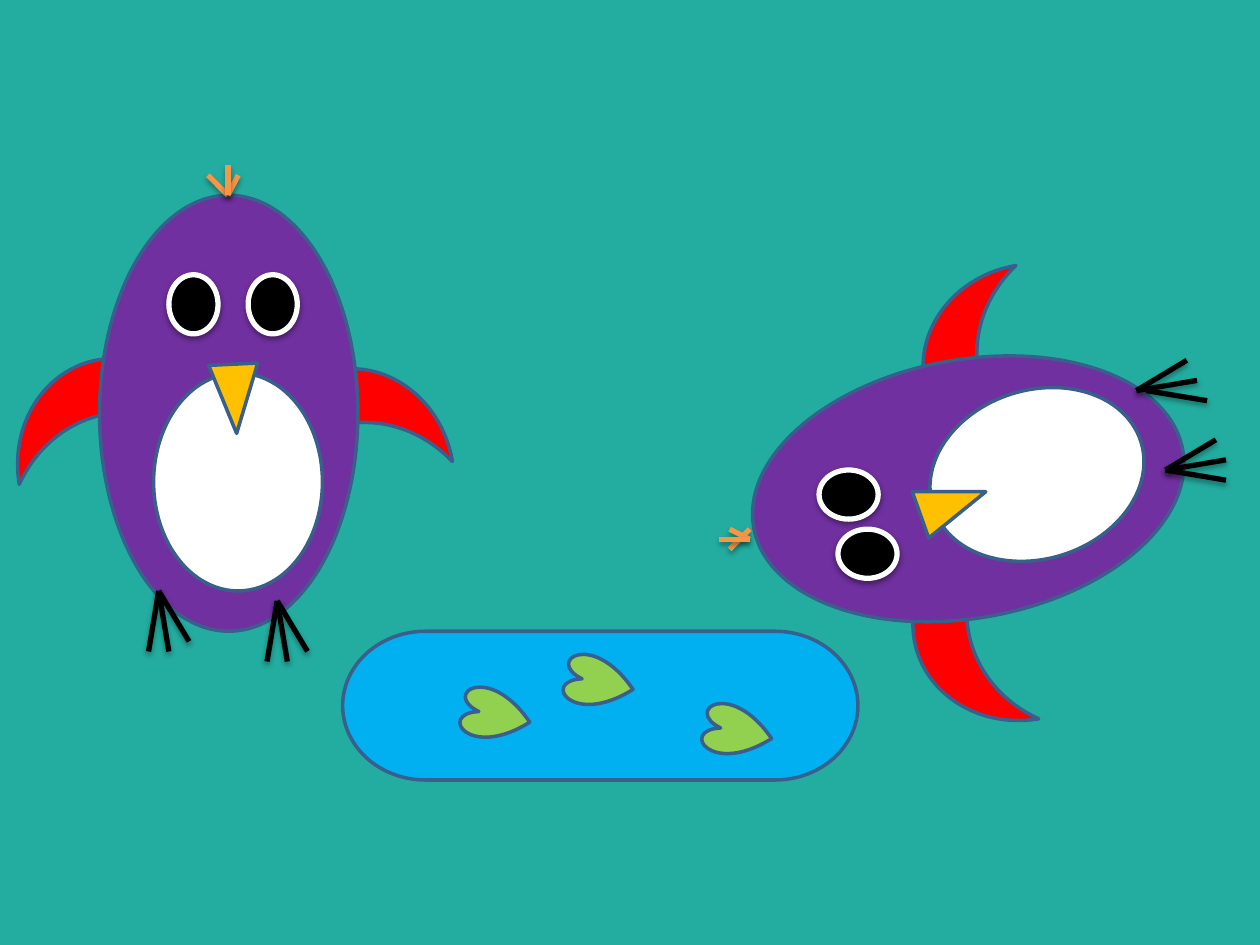
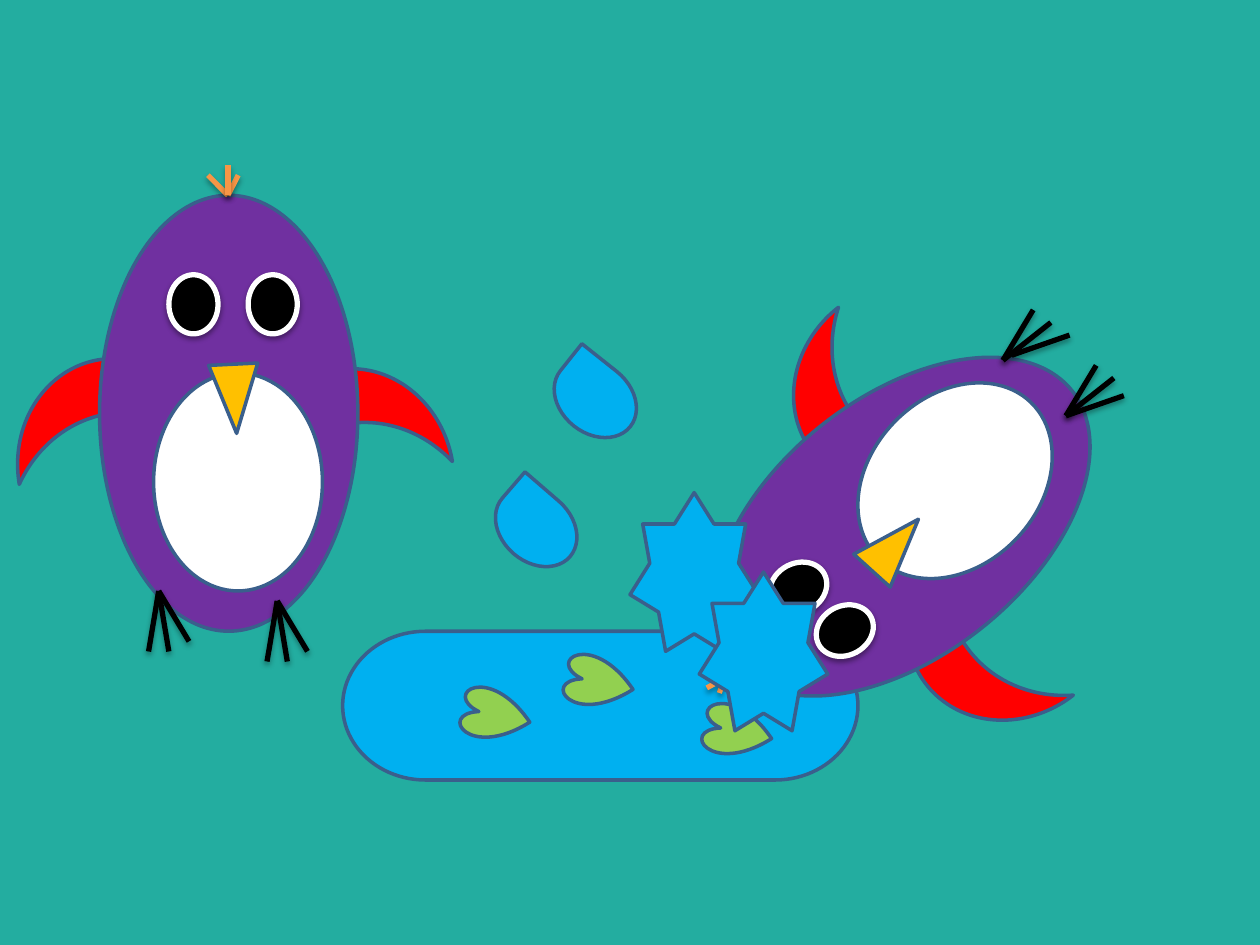
from lxml.etree import SubElement
from pptx import Presentation
from pptx.dml.color import RGBColor
from pptx.enum.shapes import MSO_CONNECTOR, MSO_SHAPE
from pptx.oxml.ns import qn
from pptx.util import Pt

# Colours
BACKGROUND = "23ADA0"
OUTLINE = "3A5F8C"
PURPLE = "7030A0"
RED = "FF0000"
BLACK = "000000"
WHITE = "FFFFFF"
YELLOW = "FFC000"
ORANGE = "F79646"
WATER = "00B0F0"
LEAF = "92D050"

# Sizes of the parts, width and height
WING = (62.6, 113)
BODY = (147.6, 249.1)
EYE = (28.1, 33.8)
BELLY = (96.5, 124.6)
BEAK = (28.1, 39.6)
POND = (294.5, 85)
LILY_PAD = (28.1, 39.6)
DROP = (39.6, 51.1)
SPLASH = (73.4, 90.7)

# Poses: left and top of each part before turning, then its rotation.
# Toes run from each ankle; the last toe of the second foot starts at a shift.
POSES = {
    "standing": {
        "wings": [(30.2, 180), (166.3, 185.8)], "wing_turn": 80.4,
        "body": (56.9, 111.6), "body_turn": 0,
        "eyes": [(96.5, 157), (141.8, 157)], "eye_turn": 0,
        "belly": (87.8, 213.1), "belly_turn": 0,
        "beak": (120.2, 208.1), "beak_turn": 177.2,
        "ankles": [(90.7, 337.7), (158.4, 343.4)],
        "toes": [(-5.8, 34.6), (17.3, 28.8), (5.8, 34.6)],
        "last_toe_shift": (0, 0),
        "crest": [(118.8, 100.1, 130.3, 111.6), (136.1, 100.1, 130.3, 111.6),
                  (130.3, 94.3, 130.3, 111.6)],
    },
    "falling": {
        "wings": [(522, 303.8), (527.8, 156.2)], "wing_turn": 350.4,
        "body": (479.5, 154.8), "body_turn": 259.7,
        "eyes": [(481.7, 299.5), (470.9, 265.7)], "eye_turn": 270,
        "belly": (544.3, 208.8), "belly_turn": 252.5,
        "beak": (530.6, 267.8), "beak_turn": 70.5,
        "ankles": [(666, 268.6), (649.4, 223.2)],
        "toes": [(28.8, -17.3), (34.6, -5.8), (34.6, 5.8)],
        "last_toe_shift": (5.8, 0),
        "crest": [(416.9, 313.9, 428.4, 302.4), (416.9, 302.4, 428.4, 308.2),
                  (411.1, 308.2, 428.4, 308.2)],
    },
    "diving": {
        "wings": [(522.7, 315.4), (457.9, 182.9)], "wing_turn": 322.1,
        "body": (441.4, 176.4), "body_turn": 231.4,
        "eyes": [(468.7, 343.4), (442.1, 319)], "eye_turn": 241.7,
        "belly": (497.5, 212.4), "belly_turn": 224.2,
        "beak": (497.5, 291.6), "beak_turn": 42.1,
        "ankles": [(609.1, 237.6), (573.1, 205.9)],
        "toes": [(17.3, -28.8), (27.4, -21.6), (33.1, -11.5)],
        "last_toe_shift": (5, -2.9),
        "crest": [(411.1, 396, 416.2, 380.2), (406.1, 385.9, 418.3, 385.2),
                  (403.9, 393.1, 418.3, 385.2)],
    },
}
SCENES = [
    ["standing", "falling", "pond"],
    ["standing", "pond", "diving"],
]


def set_outline(shape, color, width, shadow_opacity=0, shadow_distance=0):
    shape.line.color.rgb = RGBColor.from_string(color)
    shape.line.width = Pt(width)
    effects = SubElement(shape._element.spPr, qn("a:effectLst"))
    if shadow_opacity:
        shadow = SubElement(effects, qn("a:outerShdw"), blurRad=str(Pt(3.1)),
                            dist=str(Pt(shadow_distance)), dir="5400000", rotWithShape="0")
        shadow_color = SubElement(shadow, qn("a:srgbClr"), val=BLACK)
        SubElement(shadow_color, qn("a:alpha"), val=str(shadow_opacity * 1000))


def add_part(shapes, preset, position, size, fill, rotation=0, outline=(OUTLINE, 2)):
    shape = shapes.add_shape(preset, *[Pt(length) for length in position + size])
    shape.rotation = rotation
    shape.fill.solid()
    shape.fill.fore_color.rgb = RGBColor.from_string(fill)
    set_outline(shape, *outline)


presentation = Presentation()
presentation.slide_width = Pt(720)
presentation.slide_height = Pt(540)

# Background shared by both slides
background = presentation.slide_master.background.fill
background.solid()
background.fore_color.rgb = RGBColor.from_string(BACKGROUND)

for scene in SCENES:
    slide = presentation.slides.add_slide(presentation.slide_layouts[6])
    for item in scene:
        shapes = slide.shapes.add_group_shape().shapes

        # Pond with lily pads
        if item == "pond":
            add_part(shapes, MSO_SHAPE.FLOWCHART_TERMINATOR, (195.8, 360.7), POND, WATER)
            for position in [(269.3, 388.8), (328.3, 370.1), (407.5, 398.2)]:
                add_part(shapes, MSO_SHAPE.HEART, position, LILY_PAD, LEAF, 281.8)
            continue

        # Penguin wings, body and eyes
        pose = POSES[item]
        for position in pose["wings"]:
            add_part(shapes, MSO_SHAPE.MOON, position, WING, RED, pose["wing_turn"])
        add_part(shapes, MSO_SHAPE.FLOWCHART_CONNECTOR, pose["body"], BODY, PURPLE,
                 pose["body_turn"])
        for position in pose["eyes"]:
            add_part(shapes, MSO_SHAPE.FLOWCHART_CONNECTOR, position, EYE, BLACK,
                     pose["eye_turn"], (WHITE, 3, 38, 1.6))

        # Feet and crest
        strokes = [(ORANGE, *ends) for ends in pose["crest"]]
        for foot, (x, y) in enumerate(pose["ankles"]):
            for toe, (across, down) in enumerate(pose["toes"]):
                shifted = foot == 1 and toe == 2
                shift_x, shift_y = pose["last_toe_shift"] if shifted else (0, 0)
                start_x, start_y = x + shift_x, y + shift_y
                strokes.append((BLACK, start_x, start_y, start_x + across, start_y + down))
        for color, *ends in strokes:
            connector = shapes.add_connector(MSO_CONNECTOR.STRAIGHT,
                                             *[Pt(length) for length in ends])
            set_outline(connector, color, 3, 35, 1.8)

        # Belly and beak
        add_part(shapes, MSO_SHAPE.FLOWCHART_CONNECTOR, pose["belly"], BELLY, WHITE,
                 pose["belly_turn"])
        add_part(shapes, MSO_SHAPE.ISOSCELES_TRIANGLE, pose["beak"], BEAK, YELLOW,
                 pose["beak_turn"])

# Drops and splashes on the last slide
for position, rotation in [((320.4, 202.3), 308.5), ((286.6, 275.8), 310.8)]:
    add_part(slide.shapes, MSO_SHAPE.TEAR, position, DROP, WATER, rotation)
for position in [(360, 281.5), (399.6, 326.9)]:
    add_part(slide.shapes, MSO_SHAPE.STAR_7_POINT, position, SPLASH, WATER)

presentation.save("out.pptx")
